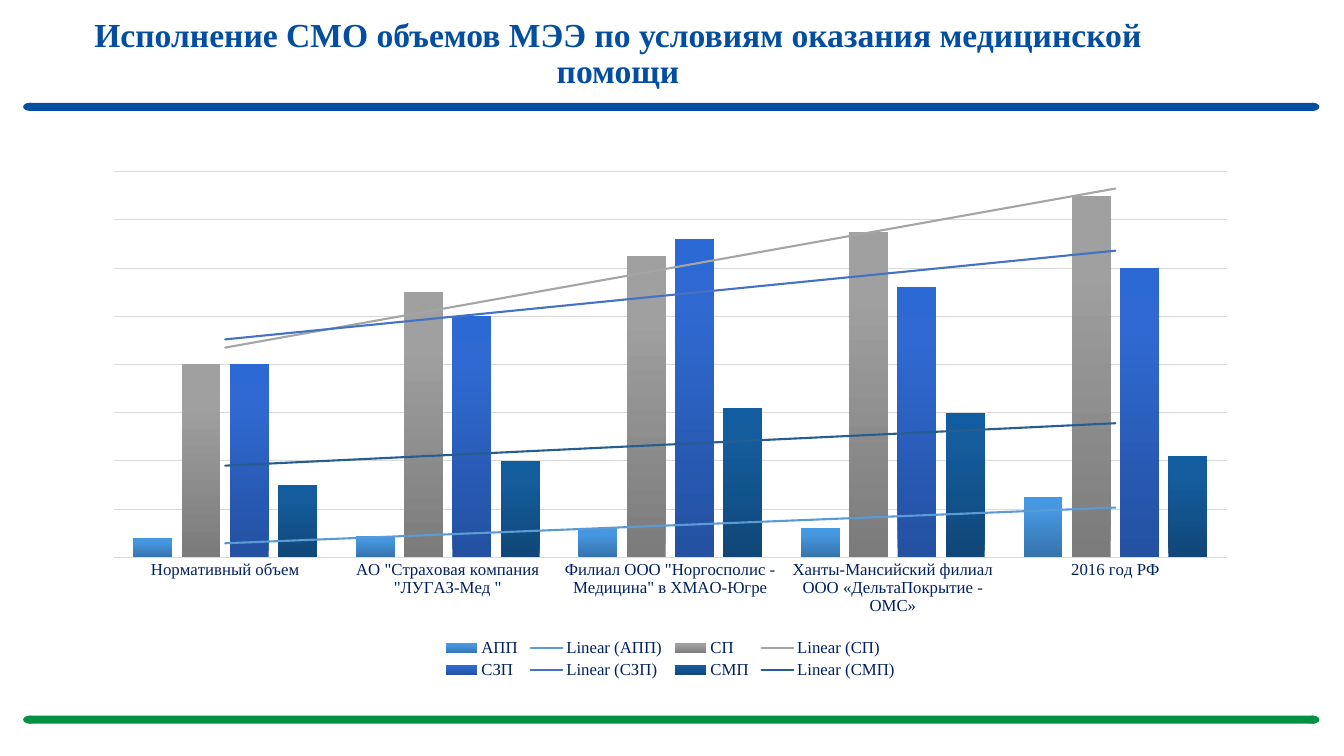
"""Build the slide on insurers' fulfilment of examination volumes by type of care."""
from lxml import etree
from pptx import Presentation
from pptx import util as u
from pptx.chart import data as chart_data
from pptx.dml.color import RGBColor
from pptx.enum import chart as charts, shapes, text
from pptx.oxml import ns

PX = 9144
FONT = "Times New Roman"
BLUE, GREEN, NAVY, GRID = "034EA1", "009240", "002060", "D9D9D9"
NAMESPACES = f'{ns.nsdecls("c", "a")}'

CATEGORIES = [
    "Нормативный объем",
    'АО "Страховая компания "ЛУГАЗ-Мед "',
    'Филиал ООО "Норгосполис - Медицина" в ХМАО-Югре',
    "Ханты-Мансийский филиал ООО «ДельтаПокрытие - ОМС»",
    "2016 год РФ",
]
SERIES = [
    ("АПП", [0.008, 0.009, 0.012, 0.012, 0.025], "5B9BD5", ["3674AD", "4697E0", "4498E4"]),
    ("СП", [0.08, 0.11, 0.125, 0.135, 0.15], "A5A5A5", ["7B7B7B", "A0A0A0", "A1A1A1"]),
    ("СЗП", [0.08, 0.1, 0.132, 0.112, 0.12], "4472C4", ["2451A1", "2F69D1", "2C69D5"]),
    ("СМП", [0.03, 0.04, 0.062, 0.06, 0.042], "255E91", ["104778", "145C9C", "125CA0"]),
]


def color(value):
    return RGBColor.from_string(value)


def set_font(font, size, value, bold=False):
    font.name, font.size, font.bold = FONT, u.Pt(size), bold
    font.color.rgb = color(value)


deck = Presentation()
deck.slide_width, deck.slide_height = u.Inches(13.333), u.Inches(7.5)
page = deck.slides.add_slide(deck.slide_layouts[6])

for top, fill in ((102, BLUE), (710, GREEN)):
    for kind, left, width in (
        (shapes.MSO_SHAPE.RECTANGLE, 29, 1275),
        (shapes.MSO_SHAPE.OVAL, 23, 13),
        (shapes.MSO_SHAPE.OVAL, 1296, 13),
    ):
        bar = page.shapes.add_shape(kind, left * PX, top * PX, width * PX, 8 * PX)
        bar.shadow.inherit = False
        bar.fill.solid()
        bar.fill.fore_color.rgb = color(fill)
        bar.line.fill.background()

title = page.shapes.add_textbox(49 * PX, 13 * PX, 1128 * PX, 82 * PX)
title.text_frame.word_wrap = True
title.text_frame.vertical_anchor = text.MSO_ANCHOR.BOTTOM
para = title.text_frame.paragraphs[0]
para.alignment = text.PP_ALIGN.CENTER
para.line_spacing = 0.9
span = para.add_run()
span.text = "Исполнение СМО объемов МЭЭ по условиям оказания медицинской помощи"
set_font(span.font, 24, BLUE, bold=True)

volumes = chart_data.CategoryChartData(number_format="0.00%")
volumes.categories = CATEGORIES
for name, values, trend_color, gradient in SERIES:
    volumes.add_series(name, values)
chart = page.shapes.add_chart(
    charts.XL_CHART_TYPE.COLUMN_CLUSTERED, 90 * PX, 160 * PX, 1150 * PX, 517 * PX, volumes
).chart
chart.has_title = False
set_font(chart.font, 12, NAVY)

plot = chart.plots[0]
plot.vary_by_categories = False
plot.gap_width, plot.overlap = 100, -24

value_axis = chart.value_axis
value_axis.visible = False
value_axis.minimum_scale, value_axis.maximum_scale, value_axis.major_unit = 0, 0.16, 0.02
value_axis.major_gridlines.format.line.color.rgb = color(GRID)
value_axis.major_gridlines.format.line.width = u.Pt(0.75)

category_axis = chart.category_axis
category_axis.major_tick_mark = charts.XL_TICK_MARK.NONE
category_axis.format.line.color.rgb = color(GRID)
category_axis.format.line.width = u.Pt(1)
set_font(category_axis.tick_labels.font, 12, NAVY)

chart.has_legend = True
legend = chart.legend
legend.position = charts.XL_LEGEND_POSITION.BOTTOM
legend.include_in_layout = False
set_font(legend.font, 12, NAVY)

for series, (name, values, trend_color, gradient) in zip(plot.series, SERIES):
    stops = "".join(
        f'<a:gs pos="{place}"><a:srgbClr val="{shade}"/></a:gs>'
        for place, shade in zip((0, 80000, 100000), gradient)
    )
    series.format.fill.background()
    no_fill = series.format.fill._xPr.find(ns.qn("a:noFill"))
    no_fill.getparent().replace(no_fill, etree.fromstring(
        f'<a:gradFill {NAMESPACES} rotWithShape="1"><a:gsLst>{stops}</a:gsLst>'
        '<a:lin ang="16200000" scaled="0"/></a:gradFill>'
    ))
    series._element.find(ns.qn("c:cat")).addprevious(etree.fromstring(
        f'<c:trendline {NAMESPACES}><c:spPr><a:ln w="19050" cap="rnd"><a:solidFill>'
        f'<a:srgbClr val="{trend_color}"/></a:solidFill></a:ln></c:spPr>'
        '<c:trendlineType val="linear"/><c:dispRSqr val="0"/><c:dispEq val="0"/></c:trendline>'
    ))

plot_area = chart._chartSpace.chart.plotArea
for old in plot_area.findall(ns.qn("c:layout")) + legend._element.findall(ns.qn("c:layout")):
    old.getparent().remove(old)
for target, inner, frame in (
    (plot_area, '<c:layoutTarget val="inner"/>', (0.02, 0.02, 0.96, 0.74)),
    (legend._element, "", (0.3, 0.91, 0.4, 0.09)),
):
    sizes = "".join(f'<c:{key} val="{size}"/>' for key, size in zip("xywh", frame))
    layout = etree.fromstring(
        f'<c:layout {NAMESPACES}><c:manualLayout>{inner}<c:xMode val="edge"/>'
        f'<c:yMode val="edge"/>{sizes}</c:manualLayout></c:layout>'
    )
    target.insert(0 if inner else 1, layout)

deck.save("out.pptx")
